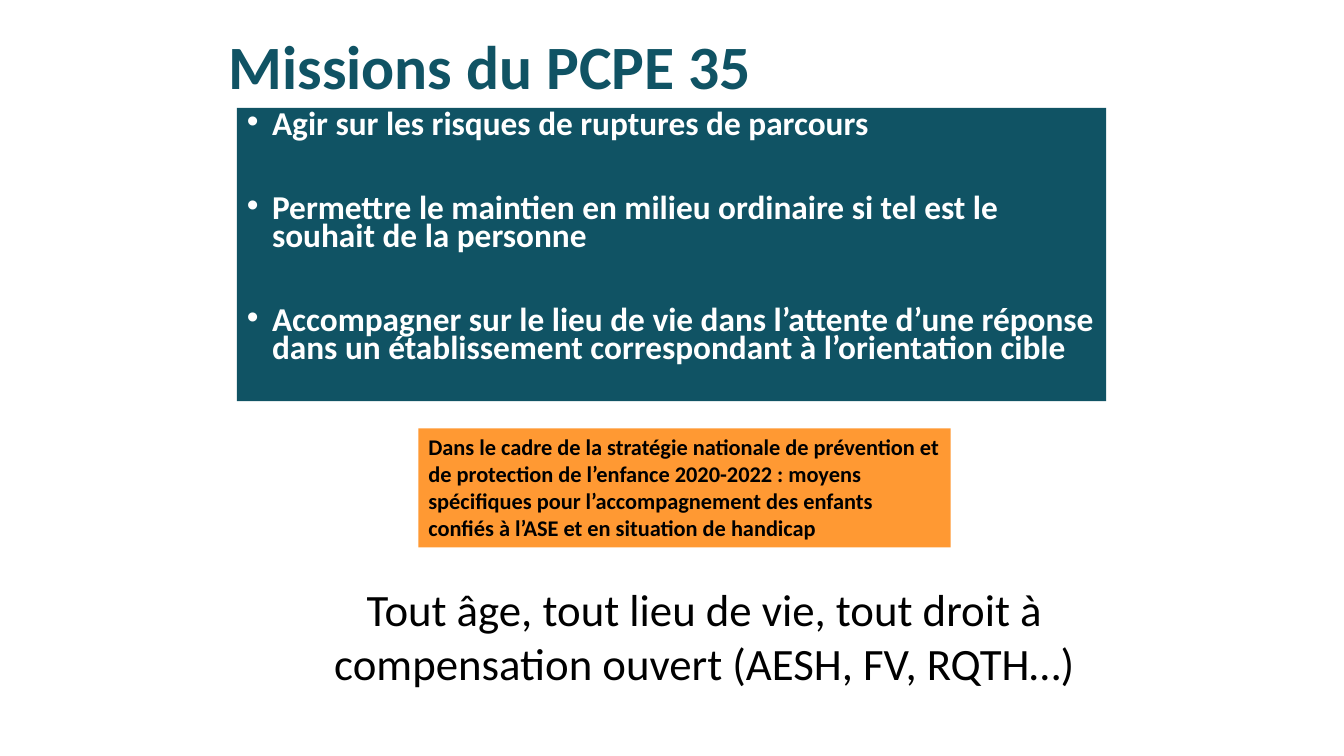
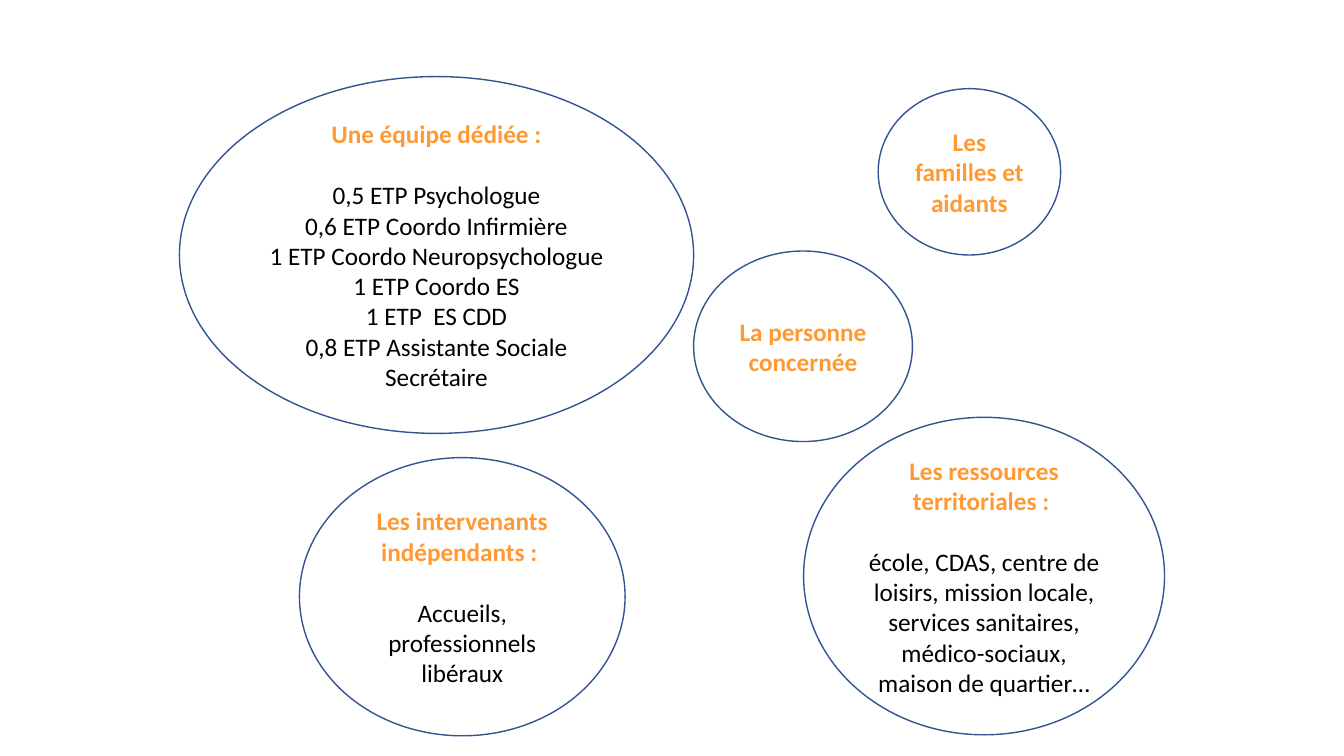
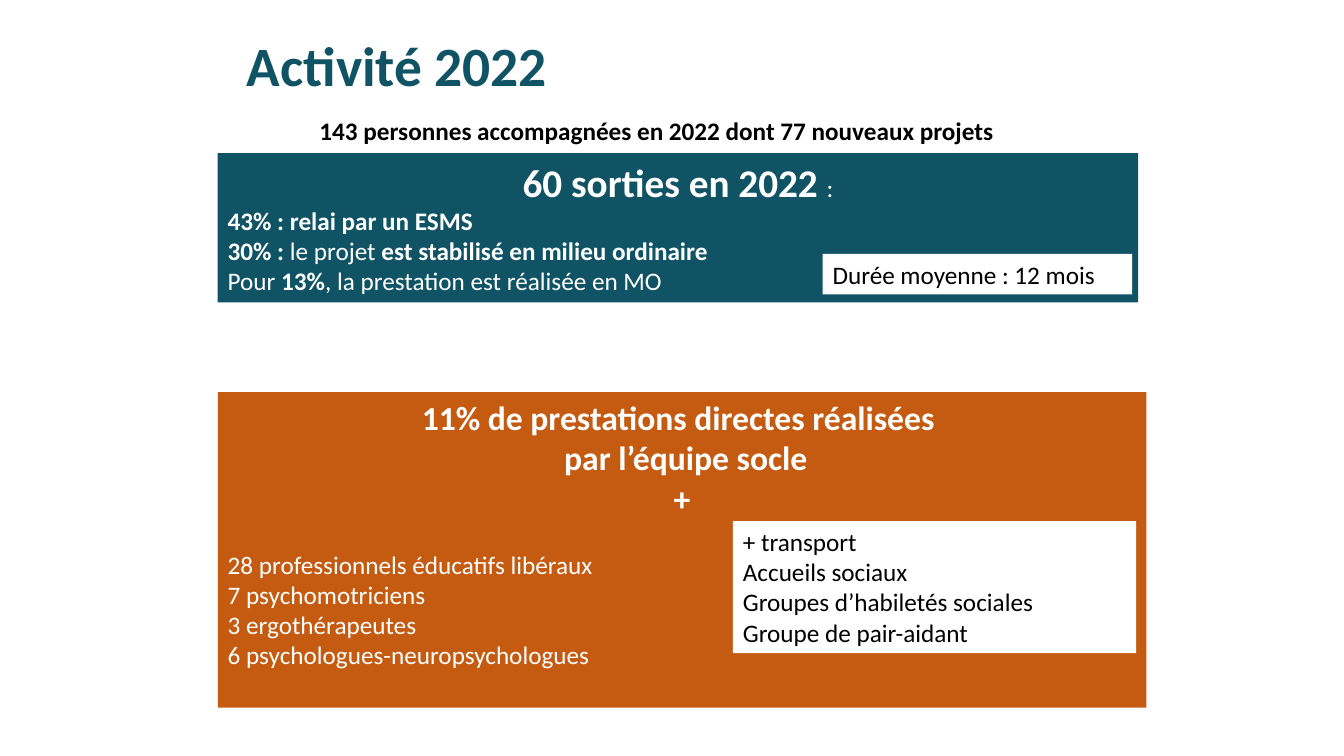
from pptx import Presentation
from pptx.dml.color import RGBColor
from pptx.enum.shapes import MSO_SHAPE
from pptx.enum.text import MSO_ANCHOR, PP_ALIGN
from pptx.oxml import parse_xml
from pptx.oxml.ns import nsdecls
from pptx.util import Inches, Pt

RECTANGLE, OVAL = MSO_SHAPE.RECTANGLE, MSO_SHAPE.OVAL
TOP, MIDDLE = MSO_ANCHOR.TOP, MSO_ANCHOR.MIDDLE
LEFT, CENTER = PP_ALIGN.LEFT, PP_ALIGN.CENTER

FONT = "Calibri"
COLORS = {
    "teal": "105364",
    "orange": "FF9933",
    "rust": "C55A11",
    "blue": "325491",
    "white": "FFFFFF",
    "black": "000000",
}
LINE_GAP = 22

MISSIONS = [
    "Agir sur les risques de ruptures de parcours",
    "Permettre le maintien en milieu ordinaire si tel est le souhait de la personne",
    "Accompagner sur le lieu de vie dans l’attente d’une réponse dans un "
    "établissement correspondant à l’orientation cible",
]
STRATEGY = (
    "Dans le cadre de la stratégie nationale de prévention et de protection de "
    "l’enfance 2020-2022 : moyens spécifiques pour l’accompagnement des enfants "
    "confiés à l’ASE et en situation de handicap"
)
AUDIENCE = "Tout âge, tout lieu de vie, tout droit à compensation ouvert (AESH, FV, RQTH…)"

ACTORS = [
    ((1.78, 0.76, 5.1, 3.54), "Une équipe dédiée :", [
        "0,5 ETP Psychologue",
        "0,6 ETP Coordo Infirmière",
        "1 ETP Coordo Neuropsychologue",
        "1 ETP Coordo ES",
        "1 ETP  ES CDD",
        "0,8 ETP Assistante Sociale",
        "Secrétaire",
    ]),
    ((8.71, 0.88, 1.81, 1.65), "Les familles et aidants", []),
    ((7.97, 4.14, 3.58, 3.15), "Les ressources territoriales : ", [
        "école, CDAS, centre de loisirs, mission locale, services sanitaires, "
        "médico-sociaux, maison de quartier…",
    ]),
    ((2.97, 4.54, 3.23, 2.76), "Les intervenants indépendants : ", [
        "Accueils, professionnels libéraux",
    ]),
    ((6.88, 2.49, 2.17, 1.89), "La personne concernée", []),
]

SUPPORTED = "143 personnes accompagnées en 2022 dont 77 nouveaux projets"
EXITS_HEADING = [("60 sorties en 2022 ", {"size": 28, "bold": True}), (":", {})]
EXITS = [
    [("43% : relai par un ESMS", {"bold": True})],
    [("30% : ", {"bold": True}), ("le projet ", {}),
     ("est stabilisé en milieu ordinaire", {"bold": True})],
    [("Pour ", {}), ("13%", {"bold": True}), (", la prestation est réalisée en MO", {})],
]
DURATION = "Durée moyenne : 12 mois"
SERVICES_HEADING = ["11% de prestations directes réalisées ", " par l’équipe socle", "+"]
PROFESSIONALS = [
    "28 professionnels éducatifs libéraux",
    "7 psychomotriciens",
    "3 ergothérapeutes",
    "6 psychologues-neuropsychologues",
]
EXTRAS = ["+ transport", "Accueils sociaux", "Groupes d’habiletés sociales", "Groupe de pair-aidant"]


def rgb(name):
    return RGBColor.from_string(COLORS[name])


def add_bullet(paragraph):
    properties = paragraph._p.get_or_add_pPr()
    properties.set("marL", str(Inches(0.25)))
    properties.set("indent", str(-Inches(0.25)))
    properties.append(parse_xml(f'<a:buFont {nsdecls("a")} typeface="Arial"/>'))
    properties.append(parse_xml(f'<a:buChar {nsdecls("a")} char="•"/>'))


def write_paragraph(paragraph, text, size=18, color="black", bold=False, align=LEFT,
                    spacing=1.0, before=0, after=0, bullet=False):
    paragraph.alignment = align
    paragraph.line_spacing = spacing
    paragraph.space_before = Pt(before)
    paragraph.space_after = Pt(after)
    if bullet:
        add_bullet(paragraph)
    runs = [(text, {})] if isinstance(text, str) else text
    for run_text, changes in runs:
        run = paragraph.add_run()
        run.text = run_text
        run.font.name = FONT
        run.font.size = Pt(changes.get("size", size))
        run.font.bold = changes.get("bold", bold)
        run.font.color.rgb = rgb(color)


def add_box(slide, at, paragraphs, fill=None, line=None, kind=RECTANGLE, anchor=TOP, **text_format):
    position = [Inches(length) for length in at]
    if fill:
        shape = slide.shapes.add_shape(kind, *position)
        shape.shadow.inherit = False
        shape.fill.solid()
        shape.fill.fore_color.rgb = rgb(fill)
        if line:
            shape.line.color.rgb = rgb(line)
            shape.line.width = Pt(1)
        else:
            shape.line.fill.background()
    else:
        shape = slide.shapes.add_textbox(*position)
    frame = shape.text_frame
    frame.word_wrap = True
    frame.vertical_anchor = anchor
    for index, (text, changes) in enumerate(paragraphs):
        paragraph = frame.add_paragraph() if index else frame.paragraphs[0]
        write_paragraph(paragraph, text, **{**text_format, **changes})


def plain(texts, **changes):
    return [(text, changes) for text in texts]


def add_title(slide, text, at, size):
    add_box(slide, at, plain([text]), anchor=MIDDLE, size=size, color="teal", bold=True, spacing=0.9)


def build_missions(slide):
    add_title(slide, "Missions du PCPE 35", (2.17, -0.19, 9, 1.75), 44)
    missions = plain(MISSIONS[:1], before=10) + plain(MISSIONS[1:], before=40)
    add_box(slide, (2.35, 1.07, 8.62, 2.91), missions, fill="teal", size=23.8,
            color="white", bold=True, spacing=0.7, bullet=True)
    add_box(slide, (4.15, 4.25, 5.28, 1.18), plain([STRATEGY]), fill="orange", size=16, bold=True)
    add_box(slide, (2.81, 5.72, 8.36, 1.18), plain([AUDIENCE]), size=32, align=CENTER)


def build_actors(slide):
    for at, heading, details in ACTORS:
        after = LINE_GAP if details else 0
        paragraphs = plain([heading], color="orange", bold=True, after=after) + plain(details)
        add_box(slide, at, paragraphs, fill="white", line="blue", kind=OVAL,
                anchor=MIDDLE, align=CENTER)


def build_activity(slide):
    add_title(slide, "Activité 2022", (2.35, 0.3, 8.62, 0.75), 39.6)
    add_box(slide, (3.07, 1.09, 7.32, 0.71), plain([SUPPORTED]), bold=True)
    add_box(slide, (2.16, 1.52, 9.13, 1.48), plain([EXITS_HEADING], align=CENTER) + plain(EXITS),
            fill="teal", color="white")
    add_box(slide, (8.16, 2.52, 3.07, 0.4), plain([DURATION]), fill="white")
    services = (plain(SERVICES_HEADING, size=24, bold=True, align=CENTER)
                + plain(PROFESSIONALS[:1], before=LINE_GAP) + plain(PROFESSIONALS[1:]))
    add_box(slide, (2.16, 3.89, 9.21, 3.13), services, fill="rust", color="white")
    add_box(slide, (7.27, 5.17, 4, 1.31), plain(EXTRAS), fill="white")


def main():
    presentation = Presentation()
    presentation.slide_width = Inches(13.33)
    presentation.slide_height = Inches(7.5)
    for build in (build_missions, build_actors, build_activity):
        build(presentation.slides.add_slide(presentation.slide_layouts[6]))
    presentation.save("out.pptx")


if __name__ == "__main__":
    main()
